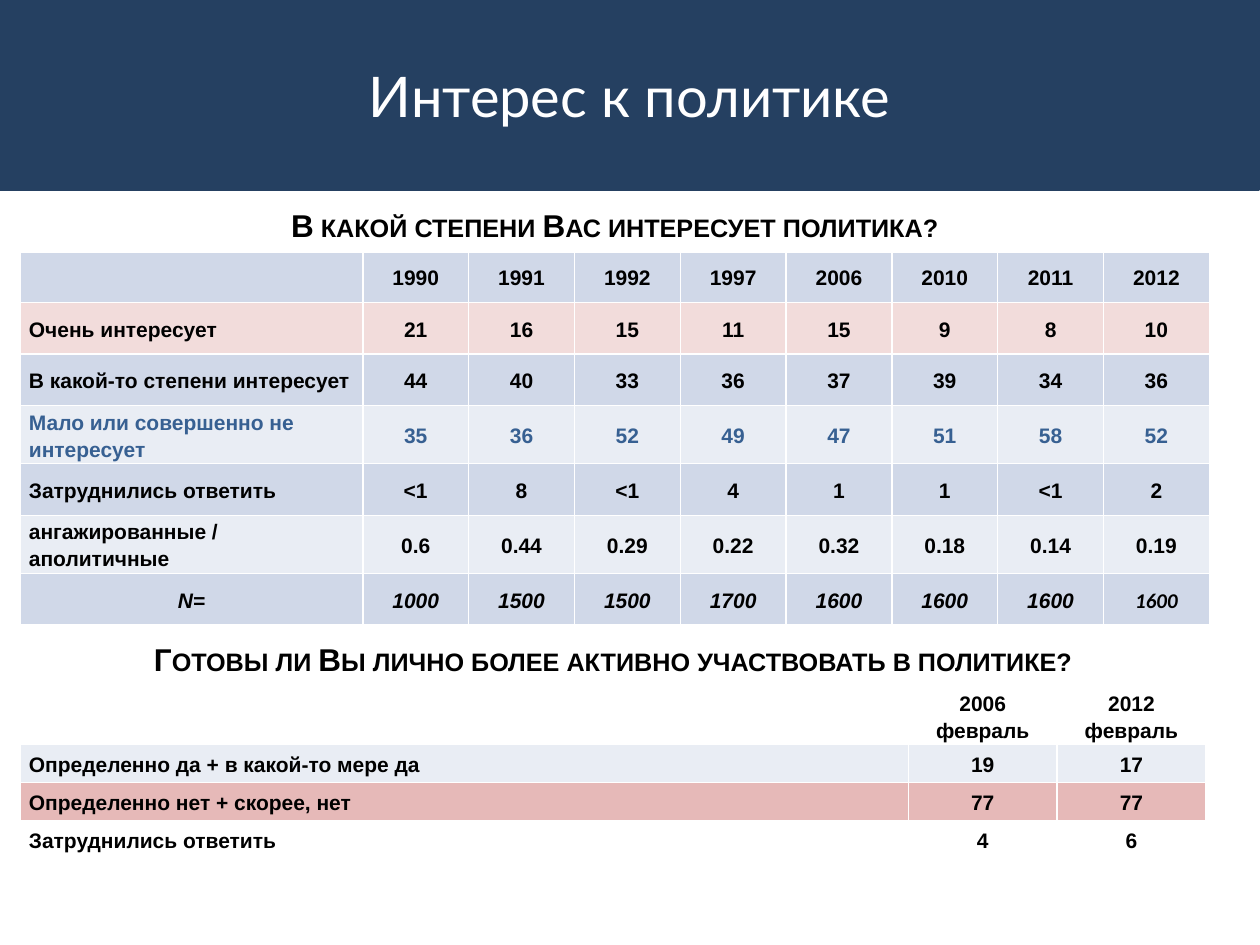
from dataclasses import dataclass

from lxml import etree
from pptx import Presentation
from pptx.dml.color import RGBColor
from pptx.enum import shapes, text
from pptx.oxml import ns
from pptx.util import Inches, Pt


@dataclass(frozen=True)
class Theme:
    navy: str = "254061"
    white: str = "FFFFFF"
    black: str = "000000"
    blue: str = "376092"
    band: str = "D0D8E8"
    pale: str = "E9EDF4"
    pink: str = "F2DCDB"
    rose: str = "E6B9B8"
    title: int = 32
    head: int = 18
    body: int = 12
    face: str = "Arial"


T = Theme()


@dataclass(frozen=True)
class Row:
    """One table row; a lone entry in cells spans the full width."""
    cells: tuple
    high: float
    fill: str = ""
    color: str = T.black
    italic: bool = False
    before: int = 2
    after: int = 2


@dataclass(frozen=True)
class Grid:
    left: float
    top: float
    cols: tuple
    rows: tuple


INTEREST = Grid(0.16, 1.56, (2.72,) + (0.84,) * 8, (
    Row(("В какой степени Вас интересует политика?",), 0.43, before=0, after=0),
    Row(("", "1990", "1991", "1992", "1997", "2006", "2010", "2011", "2012"),
        0.41, T.band, before=1, after=10),
    Row(("Очень интересует", "21", "16", "15", "11", "15", "9", "8", "10"),
        0.41, T.pink),
    Row(("В какой-то степени интересует",
         "44", "40", "33", "36", "37", "39", "34", "36"), 0.41, T.band),
    Row(("Мало или совершенно не интересует",
         "35", "36", "52", "49", "47", "51", "58", "52"), 0.43, T.pale, T.blue),
    Row(("Затруднились ответить", "<1", "8", "<1", "4", "1", "1", "<1", "2"),
        0.41, T.band),
    Row(("ангажированные / аполитичные",
         "0.6", "0.44", "0.29", "0.22", "0.32", "0.18", "0.14", "0.19"),
        0.43, T.pale),
    Row(("N=", "1000", "1500", "1500", "1700", "1600", "1600", "1600", "1600"),
        0.41, T.band, italic=True, before=1, after=1),
    Row(("",), 0.41, T.white),
))

ACTION = Grid(0.16, 5, (7.05, 1.18, 1.18), (
    Row(("Готовы ли Вы лично более активно участвовать в политике?",),
        0.45, before=1, after=10),
    Row(("", "2006\nфевраль", "2012\nфевраль"), 0.42, before=1, after=10),
    Row(("Определенно да + в какой-то мере да", "19", "17"), 0.3, T.pale),
    Row(("Определенно нет + скорее, нет", "77", "77"), 0.3, T.rose),
    Row(("Затруднились ответить", "4", "6"), 0.3, T.white),
))


def rgb(code: str) -> RGBColor:
    return RGBColor.from_string(code)


def edge(cell, under: int = 1) -> None:
    """Put white borders on a cell, the bottom one under points wide."""
    props = cell._tc.get_or_add_tcPr()
    sides = (("lnL", 1), ("lnR", 1), ("lnT", 1), ("lnB", under))
    for spot, (side, width) in enumerate(sides):
        line = etree.Element(ns.qn(f"a:{side}"), w=str(Pt(width)))
        fill = etree.SubElement(line, ns.qn("a:solidFill"))
        etree.SubElement(fill, ns.qn("a:srgbClr"), val=T.white)
        props.insert(spot, line)


def write(cell, words: str, row: Row, center: bool) -> None:
    cell.vertical_anchor = text.MSO_ANCHOR.MIDDLE
    cell.margin_left = cell.margin_right = Inches(0.07)
    cell.margin_top = cell.margin_bottom = 0
    para = cell.text_frame.paragraphs[0]
    para.text = words
    para.alignment = text.PP_ALIGN.CENTER if center else text.PP_ALIGN.LEFT
    para.line_spacing = 1.15
    para.space_before, para.space_after = Pt(row.before), Pt(row.after)
    font = para.font
    font.name, font.bold, font.italic = T.face, True, row.italic
    font.size = Pt(T.head if len(row.cells) == 1 else T.body)
    font.color.rgb = rgb(row.color)
    if len(row.cells) == 1:
        font._element.set("cap", "small")


def draw(slide, grid: Grid):
    wide, high = sum(grid.cols), sum(row.high for row in grid.rows)
    table = slide.shapes.add_table(
        len(grid.rows), len(grid.cols), Inches(grid.left), Inches(grid.top),
        Inches(wide), Inches(high)).table
    table.first_row = table.horz_banding = False
    for col, width in zip(table.columns, grid.cols):
        col.width = Inches(width)
    for r, row in enumerate(grid.rows):
        table.rows[r].height = Inches(row.high)
        lone = len(row.cells) == 1
        if lone:
            table.cell(r, 0).merge(table.cell(r, len(grid.cols) - 1))
        for c in range(len(grid.cols)):
            cell = table.cell(r, c)
            if row.fill:
                cell.fill.solid()
                cell.fill.fore_color.rgb = rgb(row.fill)
            else:
                cell.fill.background()
            edge(cell, 3 if lone and r == 0 else 1)
            if c < len(row.cells) and row.cells[c]:
                write(cell, row.cells[c], row, c > 0 or lone or row.italic)
    return table


def banner(slide) -> None:
    bar = slide.shapes.add_shape(
        shapes.MSO_SHAPE.RECTANGLE, 0, 0, Inches(9.99), Inches(1.5))
    bar.shadow.inherit = False
    bar.fill.solid()
    bar.fill.fore_color.rgb = bar.line.color.rgb = rgb(T.navy)
    bar.line.width = Pt(2)
    box = slide.shapes.add_textbox(0, Inches(0.13), Inches(10), Inches(1.25))
    frame = box.text_frame
    frame.word_wrap = True
    frame.vertical_anchor = text.MSO_ANCHOR.MIDDLE
    para = frame.paragraphs[0]
    para.text = "Интерес к политике"
    para.alignment = text.PP_ALIGN.CENTER
    para.font.name, para.font.size = "Lato", Pt(T.title)
    para.font.color.rgb = rgb(T.white)


def main() -> None:
    deck = Presentation()
    deck.slide_width, deck.slide_height = Inches(10), Inches(7.5)
    slide = deck.slides.add_slide(deck.slide_layouts[6])
    banner(slide)
    table = draw(slide, INTEREST)
    table.cell(7, 8).text_frame.paragraphs[0].font.name = "Calibri"
    draw(slide, ACTION)
    deck.save("out.pptx")


if __name__ == "__main__":
    main()
